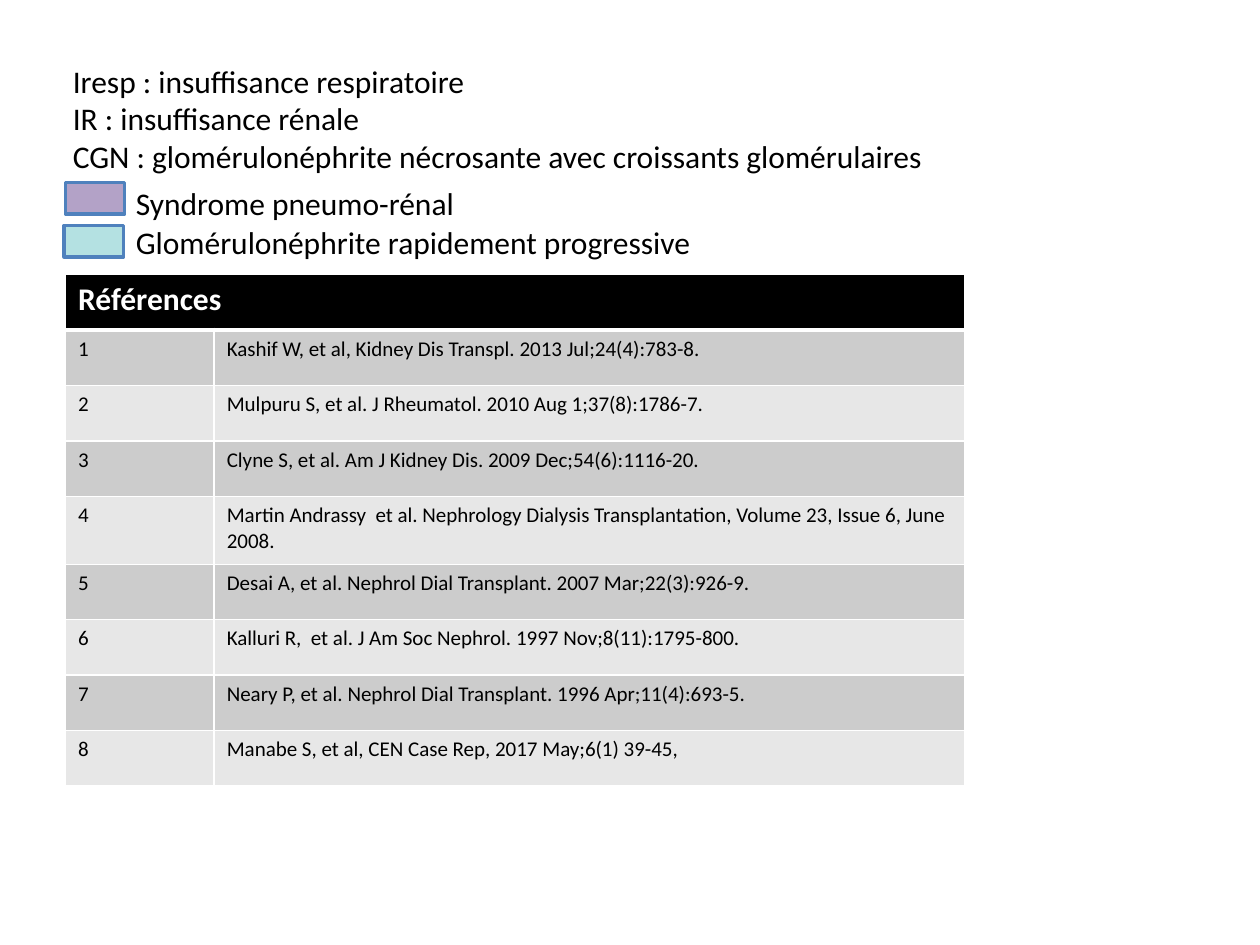
from lxml import etree
from pptx import Presentation
from pptx.dml.color import RGBColor
from pptx.enum.shapes import MSO_SHAPE
from pptx.oxml.ns import qn
from pptx.util import Inches, Pt

RECTANGLE = MSO_SHAPE.RECTANGLE
FONT = "Calibri"
BLACK, WHITE = "000000", "FFFFFF"
BANDS = ("CCCCCC", "E7E7E7")
ABBREVIATIONS = [
    "Iresp : insuffisance respiratoire",
    "IR : insuffisance rénale",
    "CGN : glomérulonéphrite nécrosante avec croissants glomérulaires",
]
LEGEND = [
    ("Syndrome pneumo-rénal", "B3A2C7", (0.52, 1.45), (0.98, 1.41, 3.86, 0.4)),
    ("Glomérulonéphrite rapidement progressive", "B4E1E2", (0.51, 1.79), (0.98, 1.72, 6.14, 0.4)),
]
REFERENCES = [
    "Kashif W, et al, Kidney Dis Transpl. 2013 Jul;24(4):783-8.",
    "Mulpuru S, et al. J Rheumatol. 2010 Aug 1;37(8):1786-7.",
    "Clyne S, et al. Am J Kidney Dis. 2009 Dec;54(6):1116-20.",
    "Martin Andrassy  et al. Nephrology Dialysis Transplantation, Volume 23, Issue 6, June 2008.",
    "Desai A, et al. Nephrol Dial Transplant. 2007 Mar;22(3):926-9.",
    "Kalluri R,  et al. J Am Soc Nephrol. 1997 Nov;8(11):1795-800.",
    "Neary P, et al. Nephrol Dial Transplant. 1996 Apr;11(4):693-5.",
    "Manabe S, et al, CEN Case Rep, 2017 May;6(1) 39-45,",
]


def color(value):
    """Turn a hex string into a colour."""
    return RGBColor.from_string(value)


def write(frame, lines, size, ink=BLACK, bold=False):
    """Fill a text frame with one formatted paragraph per line."""
    frame.text = "\n".join(lines)
    for para in frame.paragraphs:
        for span in para.runs:
            span.font.name = FONT
            span.font.size = Pt(size)
            span.font.bold = bold
            span.font.color.rgb = color(ink)


def add_text(page, box, lines):
    """Place a wrapping text box."""
    frame = page.shapes.add_textbox(*map(Inches, box)).text_frame
    frame.word_wrap = True
    write(frame, lines, 18)


def add_legend_entry(page, label, fill, corner, label_box):
    """Place a colour swatch and its label."""
    swatch = page.shapes.add_shape(RECTANGLE, *map(Inches, (*corner, 0.47, 0.25)))
    swatch.shadow.inherit = False
    swatch.fill.solid()
    swatch.fill.fore_color.rgb = color(fill)
    swatch.line.color.rgb = color("4F81BD")
    swatch.line.width = Pt(2)
    add_text(page, label_box, [label])


def style_cell(cell, fill, top=1, bottom=1):
    """Give a cell its fill and white borders."""
    cell.fill.solid()
    cell.fill.fore_color.rgb = color(fill)
    properties = cell._tc.get_or_add_tcPr()
    widths = {"a:lnL": 1, "a:lnR": 1, "a:lnT": top, "a:lnB": bottom}
    for position, (side, width) in enumerate(widths.items()):
        line = etree.Element(qn(side), w=str(Pt(width)))
        paint = etree.SubElement(line, qn("a:solidFill"))
        etree.SubElement(paint, qn("a:srgbClr"), val=WHITE)
        properties.insert(position, line)


def add_references(page, box):
    """Place the numbered reference table under a merged header."""
    table = page.shapes.add_table(len(REFERENCES) + 1, 2, *map(Inches, box)).table
    for column, width in zip(table.columns, (1.18, box[2] - 1.18)):
        column.width = Inches(width)
    for row in table.rows:
        row.height = Inches(0.44)
    table.rows[4].height = Inches(0.54)
    header = table.cell(0, 0)
    header.merge(table.cell(0, 1))
    write(header.text_frame, ["Références"], 18, WHITE, True)
    for cell in table.rows[0].cells:
        style_cell(cell, BLACK, bottom=3)
    for number, reference in enumerate(REFERENCES, 1):
        for cell, text in zip(table.rows[number].cells, (str(number), reference)):
            write(cell.text_frame, [text], 12)
            style_cell(cell, BANDS[(number - 1) % 2], top=3 if number == 1 else 1)


def main():
    """Build and save the slide."""
    deck = Presentation()
    deck.slide_width, deck.slide_height = Inches(10), Inches(7.5)
    page = deck.slides.add_slide(deck.slide_layouts[6])
    add_text(page, (0.48, 0.44, 9, 1.01), ABBREVIATIONS)
    add_references(page, (0.52, 2.18, 7.14, 4.08))
    for entry in LEGEND:
        add_legend_entry(page, *entry)
    deck.save("out.pptx")


if __name__ == "__main__":
    main()
